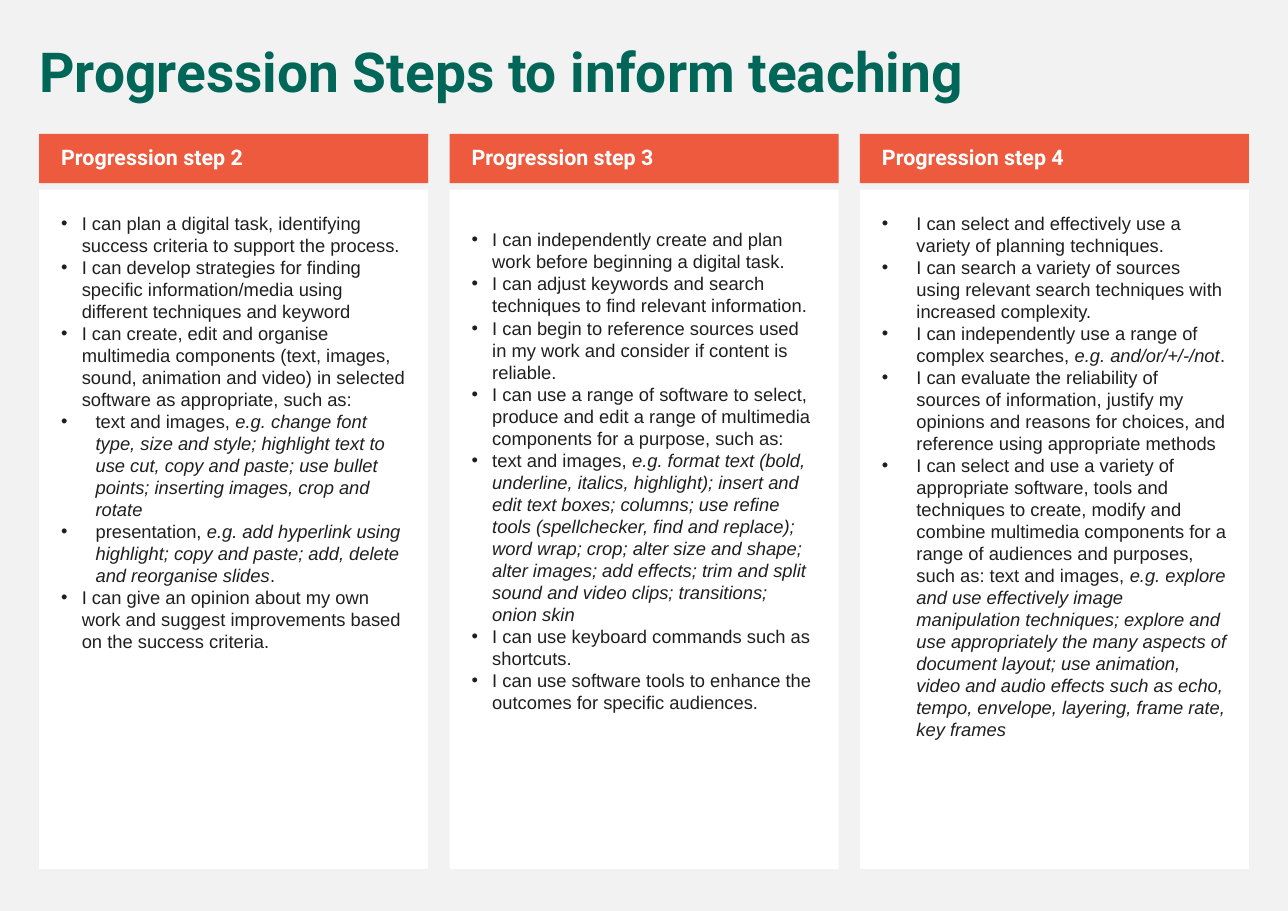
from lxml.etree import SubElement
from pptx import Presentation
from pptx.dml.color import RGBColor
from pptx.enum.shapes import MSO_SHAPE
from pptx.enum.text import MSO_ANCHOR, MSO_AUTO_SIZE, PP_ALIGN
from pptx.oxml.ns import qn
from pptx.util import Pt

BACKGROUND, GREEN, ORANGE, WHITE, INK = "F2F2F2", "006758", "ED5A3E", "FFFFFF", "1F1F1F"
NARROW, WIDE = 13.5, 22.5
COLUMN_LEFT, COLUMN_STEP, COLUMN_WIDTH = 25.6, 268.2, 254.2

# Each column: heading, top inset of its panel, (bullet indent, text) pairs.
# Text between asterisks is italic.
COLUMNS = [
    ("Progression step 2", 14.4, [
        (NARROW, "I can plan a digital task, identifying success criteria to support the process."),
        (NARROW, "I can develop strategies for finding specific information/media using different "
                 "techniques and keyword"),
        (NARROW, "I can create, edit and organise multimedia components (text, images, sound, "
                 "animation and video) in selected software as appropriate, such as:"),
        (WIDE, "text and images, *e.g. change font type, size and style; highlight text to use cut, "
               "copy and paste; use bullet points; inserting images, crop and rotate*"),
        (WIDE, "presentation, *e.g. add hyperlink using highlight; copy and paste; add, delete and "
               "reorganise slides*."),
        (NARROW, "I can give an opinion about my own work and suggest improvements based on the "
                 "success criteria."),
    ]),
    ("Progression step 3", 25.4, [
        (NARROW, "I can independently create and plan work before beginning a digital task."),
        (NARROW, "I can adjust keywords and search techniques to find relevant information."),
        (NARROW, "I can begin to reference sources used in my work and consider if content is "
                 "reliable."),
        (NARROW, "I can use a range of software to select, produce and edit a range of multimedia "
                 "components for a purpose, such as:"),
        (NARROW, "text and images, *e.g. format text (bold, underline, italics, highlight); insert "
                 "and edit text boxes; columns; use refine tools (spellchecker, find and replace); "
                 "word wrap; crop; alter size and shape; alter images; add effects; trim and split "
                 "sound and video clips; transitions; onion skin*"),
        (NARROW, "I can use keyboard commands such as shortcuts."),
        (NARROW, "I can use software tools to enhance the outcomes for specific audiences."),
    ]),
    ("Progression step 4", 14.4, [
        (WIDE, "I can select and effectively use a variety of planning techniques."),
        (WIDE, "I can search a variety of sources using relevant search techniques with increased "
               "complexity."),
        (WIDE, "I can independently use a range of complex searches, *e.g. and/or/+/-/not*."),
        (WIDE, "I can evaluate the reliability of sources of information, justify my opinions and "
               "reasons for choices, and reference using appropriate methods"),
        (WIDE, "I can select and use a variety of appropriate software, tools and techniques to "
               "create, modify and combine multimedia components for a range of audiences and "
               "purposes, such as: text and images, *e.g. explore and use effectively image "
               "manipulation techniques; explore and use appropriately the many aspects of document "
               "layout; use animation, video and audio effects such as echo, tempo, envelope, "
               "layering, frame rate, key frames*"),
    ]),
]


def color(hex_string):
    return RGBColor.from_string(hex_string)


def write(paragraph, text, *, font="Arial", size=12, ink=INK, bold=False, line_spacing=1.0):
    """Fill a paragraph, setting the parts between asterisks in italics."""
    paragraph.alignment = PP_ALIGN.LEFT
    paragraph.line_spacing = line_spacing
    for index, part in enumerate(text.split("*")):
        if part:
            run = paragraph.add_run()
            run.text = part
            run.font.name = font
            run.font.size = Pt(size)
            run.font.bold = bold
            run.font.italic = index % 2 == 1
            run.font.color.rgb = color(ink)


def add_bullet(paragraph, indent):
    properties = paragraph._p.get_or_add_pPr()
    properties.set("marL", str(Pt(indent)))
    properties.set("indent", str(-Pt(indent)))
    SubElement(properties, qn("a:buFont"), typeface="Arial")
    SubElement(properties, qn("a:buChar"), char="•")


def set_frame(frame, anchor, left, top, right, bottom):
    frame.word_wrap = True
    frame.auto_size = MSO_AUTO_SIZE.NONE
    frame.vertical_anchor = anchor
    frame.margin_left, frame.margin_top = Pt(left), Pt(top)
    frame.margin_right, frame.margin_bottom = Pt(right), Pt(bottom)


class ProgressionSlide:
    heading_style = {"font": "Roboto", "bold": True, "line_spacing": 0.9}

    def __init__(self, presentation):
        self.slide = presentation.slides.add_slide(presentation.slide_layouts[5])
        fill = self.slide.background.fill
        fill.solid()
        fill.fore_color.rgb = color(BACKGROUND)

    def title(self, text):
        title = self.slide.shapes.title
        title.left, title.top, title.width, title.height = Pt(18.5), Pt(26), Pt(798), Pt(47)
        set_frame(title.text_frame, MSO_ANCHOR.TOP, 7.2, 3.6, 7.2, 3.6)
        write(title.text_frame.paragraphs[0], text, size=36, ink=GREEN, **self.heading_style)

    def rectangle(self, left, top, height, fill):
        shape = self.slide.shapes.add_shape(
            MSO_SHAPE.RECTANGLE, Pt(left), Pt(top), Pt(COLUMN_WIDTH), Pt(height))
        shape.shadow.inherit = False
        shape.fill.solid()
        shape.fill.fore_color.rgb = color(fill)
        shape.line.fill.background()
        return shape

    def header(self, left, text):
        frame = self.rectangle(left, 87.6, 32.2, ORANGE).text_frame
        set_frame(frame, MSO_ANCHOR.MIDDLE, 14.4, 3.6, 7.2, 3.6)
        write(frame.paragraphs[0], text, size=14, ink=WHITE, **self.heading_style)

    def panel(self, left, top_inset, items):
        frame = self.rectangle(left, 124, 444, WHITE).text_frame
        set_frame(frame, MSO_ANCHOR.TOP, 14.4, top_inset, 14.4, 14.4)
        for index, (indent, text) in enumerate(items):
            paragraph = frame.add_paragraph() if index else frame.paragraphs[0]
            write(paragraph, text)
            add_bullet(paragraph, indent)


def main():
    presentation = Presentation()
    presentation.slide_width, presentation.slide_height = Pt(841.68), Pt(595.44)
    slide = ProgressionSlide(presentation)
    slide.title("Progression Steps to inform teaching")
    for index, (heading, top_inset, items) in enumerate(COLUMNS):
        left = COLUMN_LEFT + index * COLUMN_STEP
        slide.panel(left, top_inset, items)
        slide.header(left, heading)
    presentation.save("out.pptx")


if __name__ == "__main__":
    main()
